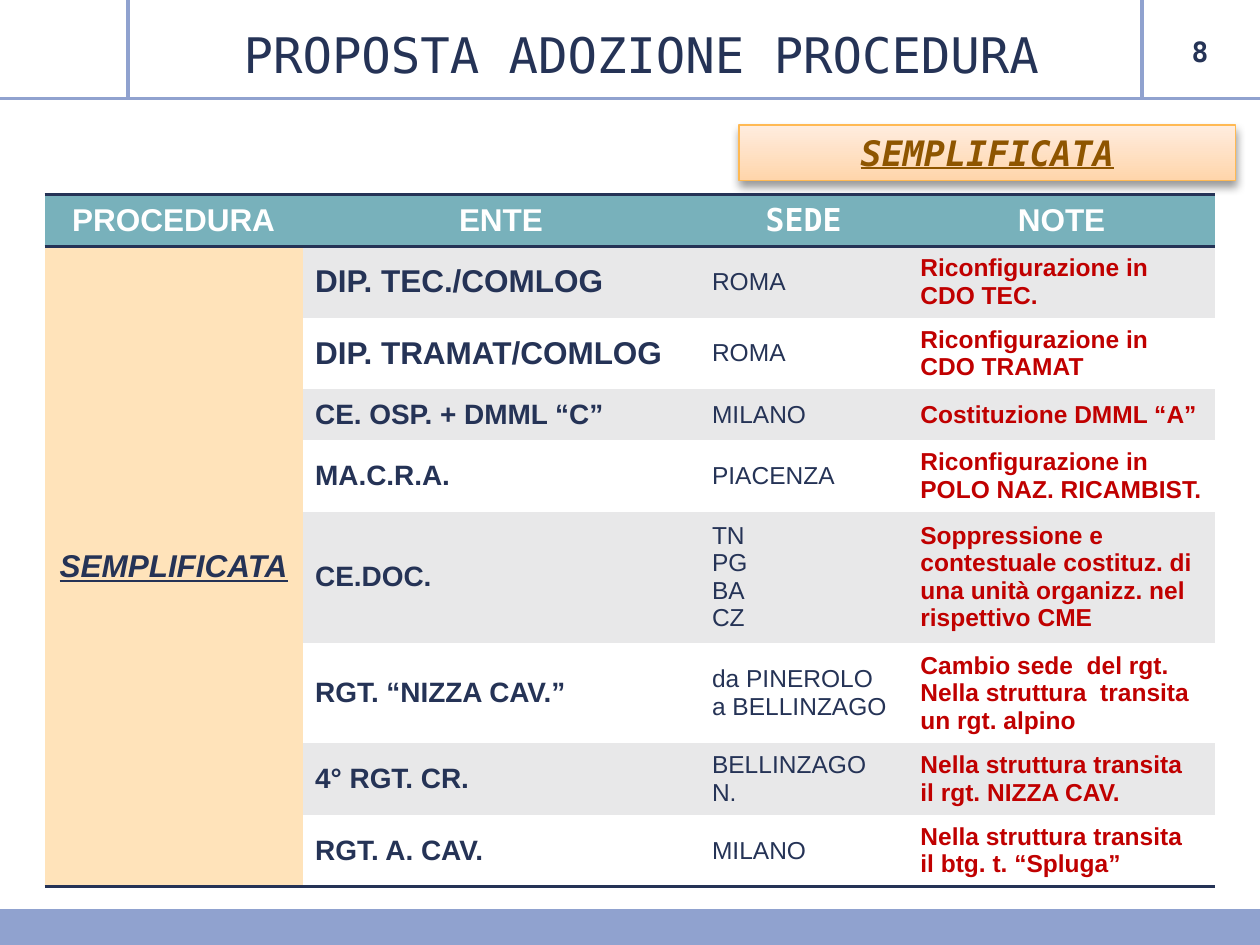
from lxml import etree
from pptx import Presentation, util as u
from pptx.dml.color import RGBColor
from pptx.enum import shapes, text
from pptx.oxml import ns

COLORS = {"navy": "253356", "blue": "90A2CF", "teal": "78B1BB", "peach": "FFE3BA",
          "gray": "E8E8E9", "white": "FFFFFF", "red": "C00000", "brown": "8E5500",
          "orange": "FFB953", "dark_peach": "FFD5AB", "light_peach": "FFEDDF",
          "black": "000000"}
MONO, SANS = "DejaVu Sans Mono", "Arial"
CENTER, MIDDLE = text.PP_ALIGN.CENTER, text.MSO_ANCHOR.MIDDLE


def write(frame, content, size, color, font=SANS, align=None, bold=False, emphasis=False):
    frame.text = content
    for paragraph in frame.paragraphs:
        paragraph.alignment = align
        for run in paragraph.runs:
            run.font.name, run.font.size, run.font.bold = font, u.Pt(size), bold
            run.font.italic = run.font.underline = emphasis
            run.font.color.rgb = RGBColor.from_string(COLORS[color])


def add_color(parent, color):
    return etree.SubElement(parent, ns.qn("a:srgbClr"), val=COLORS[color])


prs = Presentation()
prs.slide_width, prs.slide_height = u.Cm(25.4), u.Cm(19.05)
slide = prs.slides.add_slide(prs.slide_layouts[5])

footer = slide.shapes.add_shape(shapes.MSO_SHAPE.RECTANGLE, 0, u.Cm(18.33), u.Cm(25.4), u.Cm(0.72))
footer.shadow.inherit = False
footer.fill.solid()
footer.fill.fore_color.rgb = RGBColor.from_string(COLORS["blue"])
footer.line.fill.background()

for x1, y1, x2, y2, width in [(23.02, 0, 23.02, 1.98, 2.25), (0, 1.98, 25.4, 1.98, 1.75),
                              (2.58, 0, 2.58, 1.98, 2.25)]:
    rule = slide.shapes.add_connector(shapes.MSO_CONNECTOR.STRAIGHT,
                                      u.Cm(x1), u.Cm(y1), u.Cm(x2), u.Cm(y2))
    rule.line.color.rgb = RGBColor.from_string(COLORS["blue"])
    rule.line.width = u.Pt(width)
    etree.SubElement(rule._element.spPr, ns.qn("a:effectLst"))

title = slide.shapes.title
title.left, title.top, title.width, title.height = u.Cm(3.1), u.Cm(0.56), u.Cm(19.66), u.Cm(1.04)
title.text_frame.auto_size = text.MSO_AUTO_SIZE.NONE
title.text_frame.vertical_anchor = MIDDLE
write(title.text_frame, "PROPOSTA ADOZIONE PROCEDURA", 28, "navy", MONO, CENTER)

page_number = slide.shapes.add_textbox(u.Cm(23.29), u.Cm(0.33), u.Cm(1.8), u.Cm(1.4))
page_number.text_frame.word_wrap = True
page_number.text_frame.vertical_anchor = MIDDLE
write(page_number.text_frame, "8", 16, "navy", MONO, CENTER, True)

badge = slide.shapes.add_shape(shapes.MSO_SHAPE.RECTANGLE,
                               u.Cm(14.9), u.Cm(2.52), u.Cm(10.01), u.Cm(1.12))
badge.fill.gradient()
badge.fill.gradient_angle = 90
for stop, shade in zip(badge.fill.gradient_stops, ["dark_peach", "light_peach"]):
    stop.color.rgb = RGBColor.from_string(COLORS[shade])
badge.fill.gradient_stops[0].position, badge.fill.gradient_stops[1].position = 0, 1
badge.line.color.rgb = RGBColor.from_string(COLORS["orange"])
badge.line.width = u.Pt(0.75)
badge.shadow.inherit = False
shadow = etree.SubElement(badge._element.spPr.find(ns.qn("a:effectLst")), ns.qn("a:outerShdw"),
                          blurRad=str(u.Pt(5.2)), dist=str(u.Pt(3)), dir="5400000", rotWithShape="0")
etree.SubElement(add_color(shadow, "black"), ns.qn("a:alpha"), val="40000")
badge.text_frame.vertical_anchor = MIDDLE
write(badge.text_frame, "SEMPLIFICATA", 20, "brown", MONO, CENTER, True, True)

headers = ["PROCEDURA", "ENTE", "SEDE", "NOTE"]
entries = [
    ("DIP. TEC./COMLOG", "ROMA", "Riconfigurazione in CDO TEC."),
    ("DIP. TRAMAT/COMLOG", "ROMA", "Riconfigurazione in CDO TRAMAT"),
    ("CE. OSP. + DMML “C”", "MILANO", "Costituzione DMML “A”"),
    ("MA.C.R.A.", "PIACENZA", "Riconfigurazione in POLO NAZ. RICAMBIST."),
    ("CE.DOC.", "TN\nPG\nBA\nCZ",
     "Soppressione e contestuale costituz. di una unità organizz. nel rispettivo CME"),
    ("RGT. “NIZZA CAV.”", "da PINEROLO\na BELLINZAGO",
     "Cambio sede  del rgt.\nNella struttura  transita un rgt. alpino"),
    ("4° RGT. CR.", "BELLINZAGO N.", "Nella struttura transita il rgt. NIZZA CAV."),
    ("RGT. A. CAV.", "MILANO", "Nella struttura transita il btg. t. “Spluga”"),
]
column_widths = [5.2, 8, 4.2, 6.2]
row_heights = [1.03, 1.44, 1.44, 1.03, 1.44, 2.64, 2.03, 1.44, 1.44]
last = len(entries)
frame = slide.shapes.add_table(last + 1, len(headers), u.Cm(0.9), u.Cm(3.93),
                               u.Cm(sum(column_widths)), u.Cm(sum(row_heights)))
plan = frame.table
plan.first_row = plan.horz_banding = False
plan._tbl.tblPr.find(ns.qn("a:tableStyleId")).text = "{2D5ABB26-0587-4C30-8999-92F81FD0307C}"
for column, width in zip(plan.columns, column_widths):
    column.width = u.Cm(width)
for row, height in zip(plan.rows, row_heights):
    row.height = u.Cm(height)
plan.cell(1, 0).merge(plan.cell(last, 0))

for c, header in enumerate(headers):
    write(plan.cell(0, c).text_frame, header, 18, "white", MONO if header == "SEDE" else SANS, CENTER, True)
write(plan.cell(1, 0).text_frame, "SEMPLIFICATA", 18, "navy", SANS, CENTER, True, True)
for r, (unit, site, note) in enumerate(entries, 1):
    write(plan.cell(r, 1).text_frame, unit, 18 if r <= 2 else 16, "navy", bold=True)
    write(plan.cell(r, 2).text_frame, site, 14, "navy")
    write(plan.cell(r, 3).text_frame, note, 14, "red", bold=True)

for r in range(last + 1):
    for c in range(len(headers)):
        cell = plan.cell(r, c)
        cell.vertical_anchor = MIDDLE
        edges = ["a:lnT", "a:lnB"] if r == 0 else ["a:lnB"] if r == last or (r, c) == (1, 0) else []
        for edge in edges:
            border = etree.SubElement(cell._tc.get_or_add_tcPr(), ns.qn(edge), w=str(u.Pt(2)))
            add_color(etree.SubElement(border, ns.qn("a:solidFill")), "navy")
        band = "teal" if r == 0 else "peach" if c == 0 else "gray" if r % 2 else "white"
        cell.fill.solid()
        cell.fill.fore_color.rgb = RGBColor.from_string(COLORS[band])

prs.save("out.pptx")
